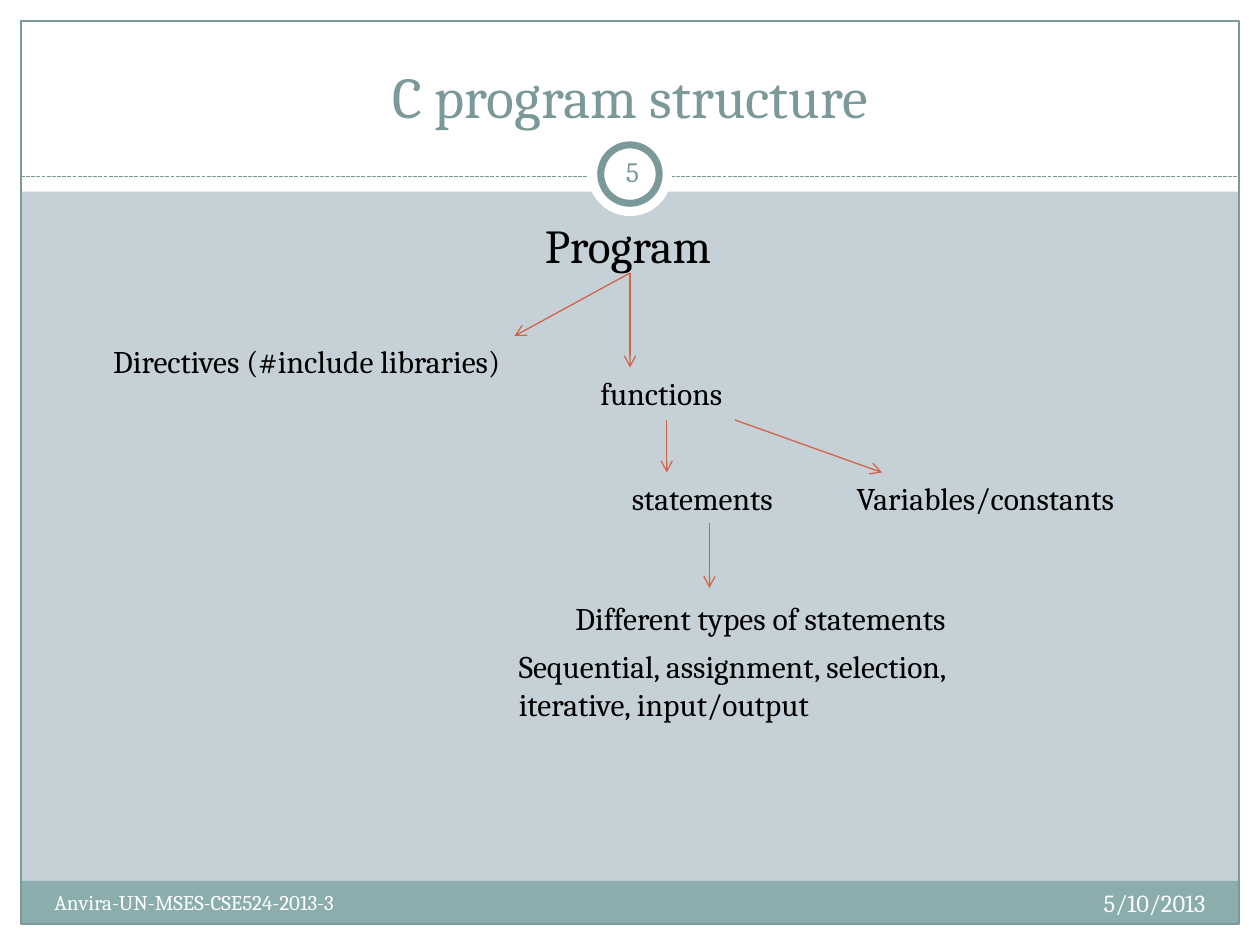
import pptx
import pptx.util
import pptx.dml.color
import pptx.enum.dml
import pptx.enum.shapes
import pptx.enum.text
import pptx.oxml.ns
import lxml.etree

Pt = pptx.util.Pt
SHAPE = pptx.enum.shapes.MSO_SHAPE
ALIGN = pptx.enum.text.PP_ALIGN
ANCHOR = pptx.enum.text.MSO_ANCHOR

THEME = {
    "font": "Cambria",
    "colors": {"background": "C5D1D7", "paper": "FFFFFF", "footer": "8CADAE",
               "accent": "7C999A", "arrow": "D16349", "ink": "000000"},
    "sizes": {"title": 33, "root": 27, "node": 18, "number": 16, "date": 14, "footer": 12},
    "hairline": 0.75,
    "ring": 4,
}

# Content: boxes are left, top, width, height in points
SLIDE_W, SLIDE_H, MARGIN = 720, 540, 12
BAND_H, RULE_Y = 109.5, 100.8
TITLE = ("C program structure", (24, 18, 672, 60))
ROOT = ("Program", (24, 120, 669.6, 360))
NODES = [
    (["Directives (#include libraries)"], (57.6, 192, 264, 29)),
    (["functions"], (336, 210, 90, 29)),
    (["statements"], (354, 270, 103, 29)),
    (["Variables/constants"], (482.4, 270, 175.7, 29)),
    (["Different types of statements"], (321.8, 339, 247, 29)),
    (["Sequential, assignment, selection,", "iterative, input/output"],
     (289.4, 366, 291, 51)),
]
ARROWS = [  # from x, y to x, y
    (360, 156, 294, 192),
    (360, 156, 360, 210),
    (381, 240, 381, 270),
    (420, 240, 504, 270),
    (405.4, 299, 405.4, 336),
]
FOOTER = ("Anvira-UN-MSES-CSE524-2013-3", (24, 504.7, 282, 29))
DATE = ("5/10/2013", (456, 504, 240, 29))
NUMBER = ("5", (343.4, 80.6, 36, 34.6))


def color(role):
    return pptx.dml.color.RGBColor.from_string(THEME["colors"][role])


def set_all(target, values):
    for attribute, value in values.items():
        setattr(target, attribute, value)


def place(shape, box):
    set_all(shape, dict(zip(("left", "top", "width", "height"), map(Pt, box))))


def write(shape, lines, size, ink="ink", align=ALIGN.LEFT, before=0, **frame_format):
    frame = shape.text_frame
    set_all(frame, {"word_wrap": True, "auto_size": pptx.enum.text.MSO_AUTO_SIZE.NONE,
                    "vertical_anchor": ANCHOR.TOP, **frame_format})
    frame.text = "\n".join(lines)
    for paragraph in frame.paragraphs:
        set_all(paragraph, {"alignment": align, "space_before": Pt(before)})
        font = paragraph.runs[0].font
        set_all(font, {"name": THEME["font"], "size": Pt(THEME["sizes"][size])})
        font.color.rgb = color(ink)


def add_text(slide, line, box, size, **text_format):
    label = slide.shapes.add_textbox(*map(Pt, box))
    write(label, [line] if isinstance(line, str) else line, size, **text_format)


def add_panel(slide, kind, box, fill=None, line=None, width=THEME["hairline"]):
    panel = slide.shapes.add_shape(kind, *map(Pt, box))
    panel.shadow.inherit = False
    for part, role in ((panel.fill, fill), (panel.line.fill, line)):
        if role:
            part.solid()
            part.fore_color.rgb = color(role)
        else:
            part.background()
    if line:
        panel.line.width = Pt(width)


def add_line(slide, ends, role, arrow=False):
    line = slide.shapes.add_connector(pptx.enum.shapes.MSO_CONNECTOR.STRAIGHT, *map(Pt, ends))
    line.line.color.rgb = color(role)
    line.line.width = Pt(THEME["hairline"])
    qn = pptx.oxml.ns.qn
    if arrow:
        outline = line.line._get_or_add_ln()
        lxml.etree.SubElement(outline, qn("a:tailEnd"), type="arrow")
    else:
        line.line.dash_style = pptx.enum.dml.MSO_LINE.SQUARE_DOT
    lxml.etree.SubElement(line._element.spPr, qn("a:effectLst"))


def circle(diameter, center_y=99.5):
    return (SLIDE_W - diameter) / 2, center_y - diameter / 2, diameter, diameter


def main():
    deck = pptx.Presentation()
    set_all(deck, {"slide_width": Pt(SLIDE_W), "slide_height": Pt(SLIDE_H)})
    slide = deck.slides.add_slide(deck.slide_layouts[5])
    slide.background.fill.solid()
    slide.background.fill.fore_color.rgb = color("background")

    # White margins, footer bar and frame
    inner_w, inner_h = SLIDE_W - 2 * MARGIN, SLIDE_H - 2 * MARGIN
    for box in ((0, SLIDE_H - MARGIN, SLIDE_W, MARGIN), (0, 0, SLIDE_W, BAND_H),
                (0, 0, MARGIN, SLIDE_H), (SLIDE_W - MARGIN, 0, MARGIN, SLIDE_H)):
        add_panel(slide, SHAPE.RECTANGLE, box, "paper")
    add_panel(slide, SHAPE.RECTANGLE, (MARGIN, 503.3, inner_w, 24.7), "footer")
    add_panel(slide, SHAPE.RECTANGLE, (MARGIN, MARGIN, inner_w, inner_h), line="accent")

    # Dashed rule and number ring
    add_line(slide, (MARGIN, RULE_Y, SLIDE_W - MARGIN, RULE_Y), "accent")
    add_panel(slide, SHAPE.OVAL, circle(48), "paper")
    add_panel(slide, SHAPE.OVAL, circle(33.4), "paper", "accent", THEME["ring"])

    # Title, brought in front of the white band
    title = slide.shapes.title
    place(title, TITLE[1])
    write(title, [TITLE[0]], "title", "accent", ALIGN.CENTER, vertical_anchor=ANCHOR.BOTTOM)
    slide.shapes._spTree.append(title._element)

    # Date, footer and slide number
    add_text(slide, *DATE, "date", ink="paper", align=ALIGN.RIGHT)
    add_text(slide, *FOOTER, "footer", ink="paper")
    insets = dict.fromkeys(("margin_left", "margin_top", "margin_right", "margin_bottom"), Pt(3.6))
    add_text(slide, *NUMBER, "number", ink="accent", align=ALIGN.CENTER,
             vertical_anchor=ANCHOR.MIDDLE, **insets)

    # Program tree
    add_text(slide, *ROOT, "root", align=ALIGN.CENTER, before=0.2 * THEME["sizes"]["root"])
    for ends in ARROWS:
        add_line(slide, ends, "arrow", arrow=True)
    for lines, box in NODES:
        add_text(slide, lines, box, "node", word_wrap=False,
                 auto_size=pptx.enum.text.MSO_AUTO_SIZE.SHAPE_TO_FIT_TEXT)

    deck.save("out.pptx")


if __name__ == "__main__":
    main()
